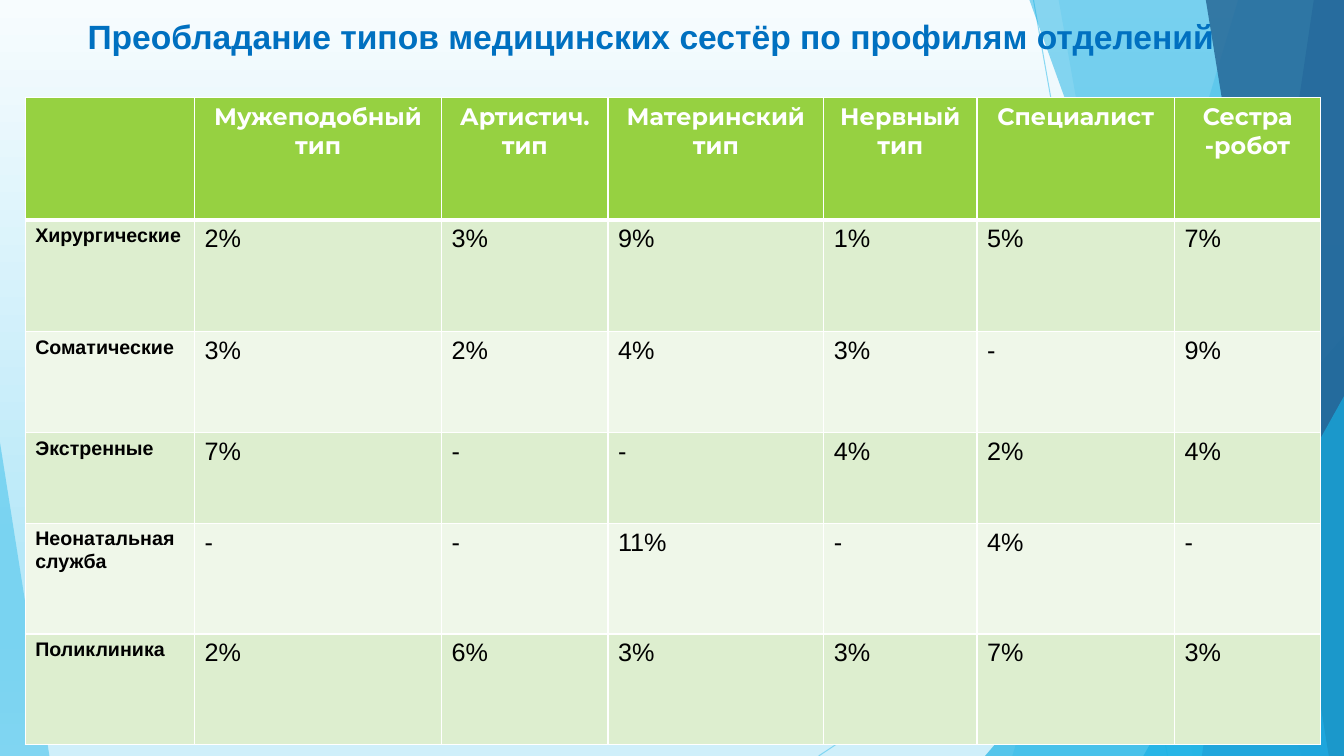
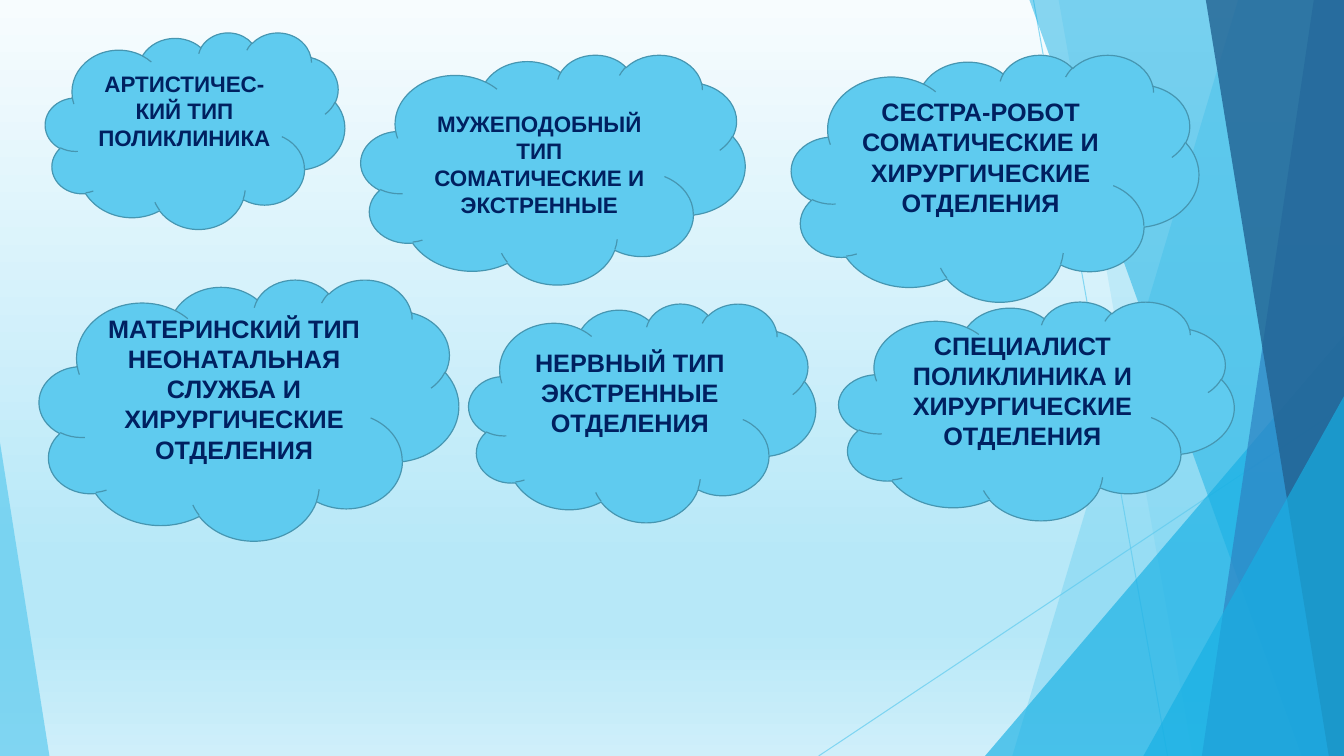
import pptx
import pptx.util
import pptx.dml.color
import pptx.enum.shapes
import pptx.enum.text
import pptx.oxml.ns
import lxml.etree

Inches = pptx.util.Inches
Pt = pptx.util.Pt
RGB = pptx.dml.color.RGBColor
qn = pptx.oxml.ns.qn
SHAPE = pptx.enum.shapes.MSO_SHAPE
CENTER = pptx.enum.text.PP_ALIGN.CENTER
LEFT = pptx.enum.text.PP_ALIGN.LEFT

# Shared look
WIDE, HIGH = 13.33, 7.5
WHITE = RGB(0xFF, 0xFF, 0xFF)
BLACK = RGB(0, 0, 0)
SKY = RGB(0x5F, 0xCB, 0xEF)
AQUA = RGB(0x17, 0xB0, 0xE4)
BLUE = RGB(0x2E, 0x83, 0xC3)
DEEP = RGB(0x22, 0x62, 0x92)
TITLE = RGB(0x00, 0x70, 0xC0)
NAVY = RGB(0x00, 0x20, 0x60)
EDGE = RGB(0x46, 0x96, 0xB1)
GREEN = RGB(0x96, 0xD1, 0x41)
BANDS = RGB(0xDD, 0xEE, 0xCF), RGB(0xEF, 0xF7, 0xE9)
STOPS = [
    (0, RGB(0xF7, 0xFC, 0xFE)),
    (74, RGB(0xB7, 0xE8, 0xF8)),
    (83, RGB(0xB7, 0xE8, 0xF8)),
    (100, RGB(0xCF, 0xEF, 0xFA)),
]
BODY, HEAD = "Arial", "Montserrat"

# Slide 1: table
COLS = [1.68, 2.45, 1.65, 2.14, 1.52, 1.96, 1.45]
ROWS = [1.21, 1.11, 1, 0.9, 1.1, 1.1]
DATA = [
    ["", "Мужеподобный тип", "Артистич. тип", "Материнский тип",
     "Нервный тип", "Специалист", "Сестра -робот"],
    ["Хирургические", "2%", "3%", "9%", "1%", "5%", "7%"],
    ["Соматические", "3%", "2%", "4%", "3%", "-", "9%"],
    ["Экстренные", "7%", "-", "-", "4%", "2%", "4%"],
    ["Неонатальная служба", "-", "-", "11%", "-", "4%", "-"],
    ["Поликлиника", "2%", "6%", "3%", "3%", "7%", "3%"],
]

# Slide 2: box, text size, bottom inset, type, departments
CLOUDS = [
    ((3.58, 0.54, 3.81, 2.28), 16, 0.05,
     "МУЖЕПОДОБНЫЙ ТИП", "СОМАТИЧЕСКИЕ И ЭКСТРЕННЫЕ"),
    ((7.85, 0.54, 4.04, 2.45), 18, 0.35,
     "СЕСТРА-РОБОТ", "СОМАТИЧЕСКИЕ И ХИРУРГИЧЕСКИЕ ОТДЕЛЕНИЯ"),
    ((0.45, 0.32, 2.97, 1.95), 16, 0.35,
     "АРТИСТИЧЕС-КИЙ ТИП", "ПОЛИКЛИНИКА"),
    ((0.39, 2.77, 4.16, 2.59), 18, 0.35,
     "МАТЕРИНСКИЙ ТИП", "НЕОНАТАЛЬНАЯ СЛУЖБА И ХИРУРГИЧЕСКИЕ ОТДЕЛЕНИЯ"),
    ((4.65, 3.01, 3.44, 2.17), 18, 0.35,
     "НЕРВНЫЙ ТИП", "ЭКСТРЕННЫЕ ОТДЕЛЕНИЯ"),
    ((8.32, 2.99, 3.92, 2.17), 18, 0.35,
     "СПЕЦИАЛИСТ", "ПОЛИКЛИНИКА И ХИРУРГИЧЕСКИЕ ОТДЕЛЕНИЯ"),
]


def style(para, size, color, bold=True, face=BODY, align=CENTER):
    para.alignment = align
    font = para.font
    font.size, font.bold, font.name = Pt(size), bold, face
    font.color.rgb = color


def fade(shape, alpha):
    for color in shape._element.spPr.iter(qn("a:srgbClr")):
        lxml.etree.SubElement(color, qn("a:alpha"), val=str(alpha * 1000))


def tint(shape, color, alpha):
    shape.shadow.inherit = False
    shape.fill.solid()
    shape.fill.fore_color.rgb = color
    shape.line.fill.background()
    fade(shape, alpha)


# Backdrop parts
def sky(slide):
    fill = slide.background.fill
    fill.gradient()
    fill.gradient_angle = 270
    stops = next(slide._element.iter(qn("a:gsLst")))
    for stop in list(stops):
        stops.remove(stop)
    for place, color in STOPS:
        stop = lxml.etree.SubElement(stops, qn("a:gs"), pos=str(place * 1000))
        lxml.etree.SubElement(stop, qn("a:srgbClr"), val=str(color))


def ray(slide, *ends):
    line = slide.shapes.add_connector(
        pptx.enum.shapes.MSO_CONNECTOR.STRAIGHT, *map(Inches, ends))
    line.line.color.rgb = SKY
    line.line.width = Pt(0.75)
    fade(line, 70)
    lxml.etree.SubElement(line._element.spPr, qn("a:effectLst"))


def beam(slide, top, foot, color, alpha):
    """Fill from a slanted left side to the right edge of the slide."""
    pen = slide.shapes.build_freeform(Inches(top), 0)
    pen.add_line_segments([(Inches(x), Inches(y)) for x, y in
                           ((WIDE, 0), (WIDE, HIGH), (foot, HIGH))])
    tint(pen.convert_to_shape(), color, alpha)


def wedge(slide, left, top, width, tip, color, alpha):
    """Right triangle that stands on the bottom of the slide."""
    shape = slide.shapes.add_shape(
        SHAPE.ISOSCELES_TRIANGLE, Inches(left), Inches(top),
        Inches(width), Inches(HIGH - top))
    shape.adjustments[0] = tip
    tint(shape, color, alpha)


def add_slide(deck):
    slide = deck.slides.add_slide(deck.slide_layouts[6])
    sky(slide)
    ray(slide, 10.25, 0, 11.58, HIGH)
    ray(slide, WIDE, 4.03, 8.12, HIGH)
    beam(slide, 12.28, 10.04, SKY, 36)
    beam(slide, 10.5, 11.83, SKY, 20)
    wedge(slide, 9.77, 3.33, 3.56, 1, AQUA, 66)
    beam(slide, 10.21, 12.91, AQUA, 50)
    beam(slide, 13.03, 11.92, BLUE, 70)
    beam(slide, 11.96, 13.18, DEEP, 80)
    wedge(slide, 11.34, 3.93, 1.99, 1, AQUA, 66)
    wedge(slide, 0, 4.39, 0.49, 0, SKY, 70)
    return slide


# Content parts
def heading(slide, box, text):
    frame = slide.shapes.add_textbox(*map(Inches, box)).text_frame
    frame.word_wrap = True
    frame.text = text
    style(frame.paragraphs[0], 24, TITLE)


def border(cell, widths):
    props = cell._tc.get_or_add_tcPr()
    for side, width in zip("LRTB", widths):
        line = lxml.etree.SubElement(props, qn("a:ln" + side),
                                     w=str(Pt(width)))
        fill = lxml.etree.SubElement(line, qn("a:solidFill"))
        lxml.etree.SubElement(fill, qn("a:srgbClr"), val=str(WHITE))


def grid(slide, left, top):
    table = slide.shapes.add_table(
        len(ROWS), len(COLS), Inches(left), Inches(top),
        Inches(sum(COLS)), Inches(sum(ROWS))).table
    for col, width in zip(table.columns, COLS):
        col.width = Inches(width)
    for row, height in zip(table.rows, ROWS):
        row.height = Inches(height)
    for r, texts in enumerate(DATA):
        for c, text in enumerate(texts):
            cell = table.cell(r, c)
            border(cell, (1, 1, 3 if r == 1 else 1, 3 if r == 0 else 1))
            cell.fill.solid()
            cell.fill.fore_color.rgb = BANDS[(r - 1) % 2] if r else GREEN
            cell.text = text
            para = cell.text_frame.paragraphs[0]
            if r == 0:
                style(para, 17, WHITE, face=HEAD)
            elif c == 0:
                style(para, 14, BLACK, align=LEFT)
            else:
                style(para, 18, BLACK, bold=False, align=LEFT)


def cloud(slide, box, size, inset, kind, wards):
    shape = slide.shapes.add_shape(SHAPE.CLOUD, *map(Inches, box))
    shape.shadow.inherit = False
    shape.fill.solid()
    shape.fill.fore_color.rgb = SKY
    shape.line.color.rgb = EDGE
    shape.line.width = Pt(0.85)
    frame = shape.text_frame
    frame.word_wrap = True
    frame.vertical_anchor = pptx.enum.text.MSO_ANCHOR.MIDDLE
    frame.margin_bottom = Inches(inset)
    frame.text = kind + "\n" + wards
    for para in frame.paragraphs:
        style(para, size, NAVY)


def main():
    deck = pptx.Presentation()
    deck.slide_width, deck.slide_height = Inches(WIDE), Inches(HIGH)

    slide = add_slide(deck)
    grid(slide, 0.25, 0.97)
    heading(slide, (0, 0.11, 12.91, 0.5),
            "Преобладание типов медицинских сестёр по профилям отделений")

    slide = add_slide(deck)
    for item in CLOUDS:
        cloud(slide, *item)

    deck.save("out.pptx")


if __name__ == "__main__":
    main()
